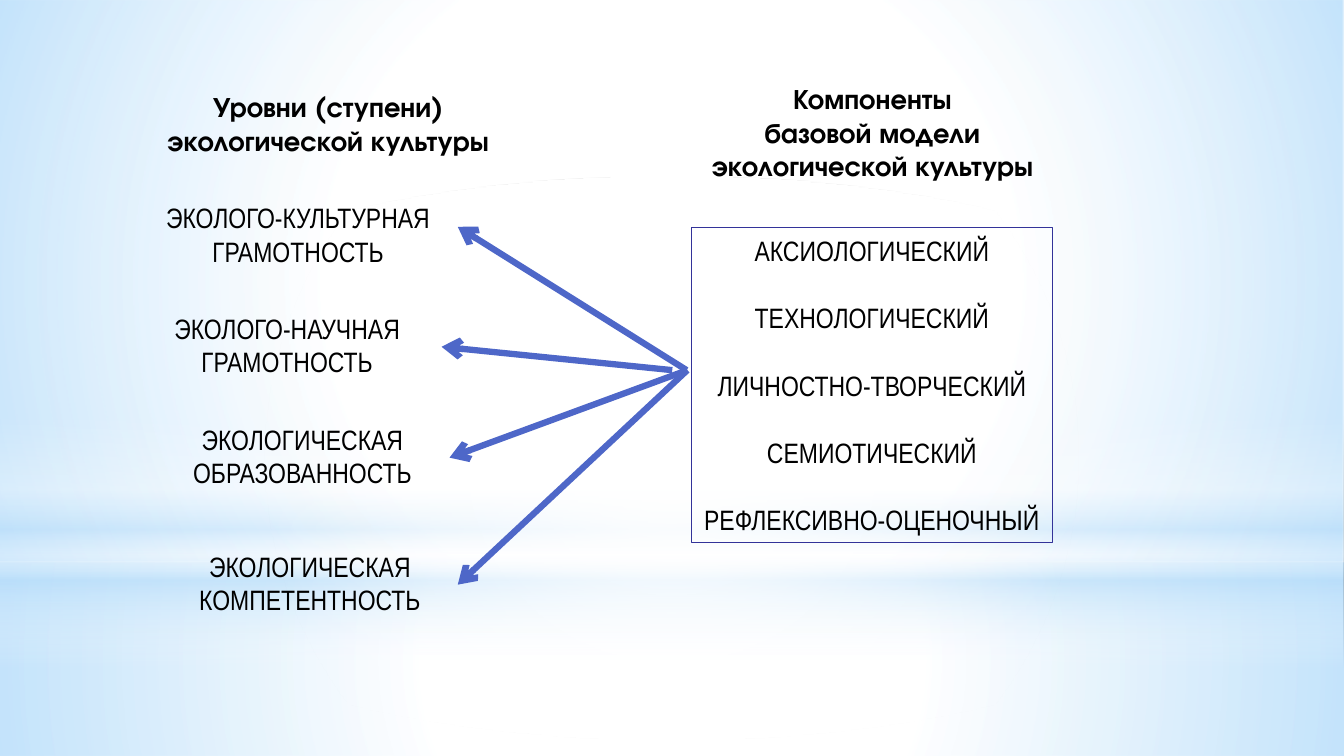
import pptx
import pptx.util
import pptx.dml.color
import pptx.enum.shapes
import pptx.enum.text
import pptx.oxml
import pptx.oxml.ns

Pt = pptx.util.Pt
RGB = pptx.dml.color.RGBColor.from_string
SHAPE = pptx.enum.shapes.MSO_SHAPE
ALIGN = pptx.enum.text.PP_ALIGN
NS = pptx.oxml.ns.nsdecls("a")
COLORS = {"white": "FFFFFF", "sky": "B4DCFA", "text": "000000",
          "frame": "333399", "arrow": "4E67C8"}
HEADING_FONT = "TeX Gyre Adventor"
LABEL_FONT = "Arial Narrow"

prs = pptx.Presentation()
prs.slide_width, prs.slide_height = Pt(960), Pt(540)
slide = prs.slides.add_slide(prs.slide_layouts[6])


def write(frame, text, font=LABEL_FONT, bold=False, first_align=ALIGN.CENTER, gap=0):
    frame.word_wrap = False
    frame.auto_size = pptx.enum.text.MSO_AUTO_SIZE.SHAPE_TO_FIT_TEXT
    for i, line in enumerate(text.split("\n")):
        paragraph = frame.add_paragraph() if i else frame.paragraphs[0]
        paragraph.text = line
        paragraph.alignment = ALIGN.CENTER if i else first_align
        paragraph.space_before = Pt(gap if i else 0)
        paragraph.font.name = font
        paragraph.font.size = Pt(20)
        paragraph.font.bold = bold
        paragraph.font.color.rgb = RGB(COLORS["text"])


# Background glow: stops are (position %, colour, opacity %)
radial = ('<a:path path="circle"><a:fillToRect l="50000" t="50000" '
          'r="50000" b="50000"/></a:path>')
downward = '<a:lin ang="5400000" scaled="0"/>'
glows = [
    (SHAPE.RECTANGLE, 402, 138, radial,
     [(0, "white", 91), (37, "white", 76), (100, "sky", 79)]),
    (SHAPE.RECTANGLE, 0, 402, radial,
     [(0, "white", 89), (48, "white", 62), (100, "sky", 79)]),
    (SHAPE.RECTANGLE, 296.6, 180, downward,
     [(0, "white", 0), (29, "white", 30), (45, "sky", 40),
      (55, "white", 26), (65, "sky", 60), (100, "white", 0)]),
    (SHAPE.OVAL, 126, 402, radial, [(0, "white", 100), (56, "white", 0)]),
]
for preset, top, height, direction, stops in glows:
    glow = slide.shapes.add_shape(preset, 0, Pt(top), prs.slide_width, Pt(height))
    glow.shadow.inherit = False
    glow.line.fill.background()
    glow.fill.background()
    stop_xml = "".join(
        f'<a:gs pos="{pos * 1000}"><a:srgbClr val="{COLORS[color]}">'
        f'<a:alpha val="{alpha * 1000}"/></a:srgbClr></a:gs>'
        for pos, color, alpha in stops)
    gradient = pptx.oxml.parse_xml(
        f'<a:gradFill {NS} rotWithShape="1"><a:gsLst>{stop_xml}</a:gsLst>{direction}</a:gradFill>')
    properties = glow._element.spPr
    properties.replace(properties.find(pptx.oxml.ns.qn("a:noFill")), gradient)

# Column headings
headings = [
    (100.1, 60.5, 55.4, "Уровни (ступени)\nэкологической культуры"),
    (488.9, 54.7, 79.9, "Компоненты\nбазовой модели\nэкологической культуры"),
]
for left, top, height, text in headings:
    heading = slide.shapes.add_textbox(Pt(left), Pt(top), Pt(268.6), Pt(height))
    write(heading.text_frame, text, font=HEADING_FONT, bold=True)

# Levels, each with the tip of its arrow
levels = [
    (111.6, 139.7, 208.1, ALIGN.LEFT, "ЭКОЛОГО-КУЛЬТУРНАЯ\nГРАМОТНОСТЬ"),
    (117.4, 218.9, 179.3, ALIGN.LEFT, "ЭКОЛОГО-НАУЧНАЯ\nГРАМОТНОСТЬ"),
    (128.2, 298.1, 175.7, ALIGN.CENTER, "ЭКОЛОГИЧЕСКАЯ\nОБРАЗОВАННОСТЬ"),
    (133.9, 388.8, 175, ALIGN.CENTER, "ЭКОЛОГИЧЕСКАЯ\nКОМПЕТЕНТНОСТЬ"),
]
for left, top, width, first_align, text in levels:
    level = slide.shapes.add_textbox(Pt(left), Pt(top), Pt(width), Pt(55.4))
    write(level.text_frame, text, first_align=first_align)

# Components of the model
components = slide.shapes.add_shape(
    SHAPE.RECTANGLE, Pt(493.9), Pt(162.2), Pt(257.8), Pt(225.4))
components.shadow.inherit = False
components.fill.background()
components.line.color.rgb = RGB(COLORS["frame"])
components.line.width = Pt(0.75)
write(components.text_frame,
      "АКСИОЛОГИЧЕСКИЙ\nТЕХНОЛОГИЧЕСКИЙ\nЛИЧНОСТНО-ТВОРЧЕСКИЙ\n"
      "СЕМИОТИЧЕСКИЙ\nРЕФЛЕКСИВНО-ОЦЕНОЧНЫЙ", gap=24)

# Arrows from the components to the levels: start x, tip x, tip y
for start_x, tip_x, tip_y in [(490.5, 327, 162), (480.2, 315.4, 247.7),
                              (491, 321.1, 326.9), (491, 327, 417.6)]:
    arrow = slide.shapes.add_connector(
        pptx.enum.shapes.MSO_CONNECTOR.STRAIGHT,
        Pt(start_x), Pt(264.4), Pt(tip_x), Pt(tip_y))
    arrow.line.color.rgb = RGB(COLORS["arrow"])
    arrow.line.width = Pt(4.5)
    arrow.line._get_or_add_ln().append(
        pptx.oxml.parse_xml(f'<a:tailEnd {NS} type="arrow"/>'))
    arrow._element.spPr.append(pptx.oxml.parse_xml(f"<a:effectLst {NS}/>"))

prs.save("out.pptx")
